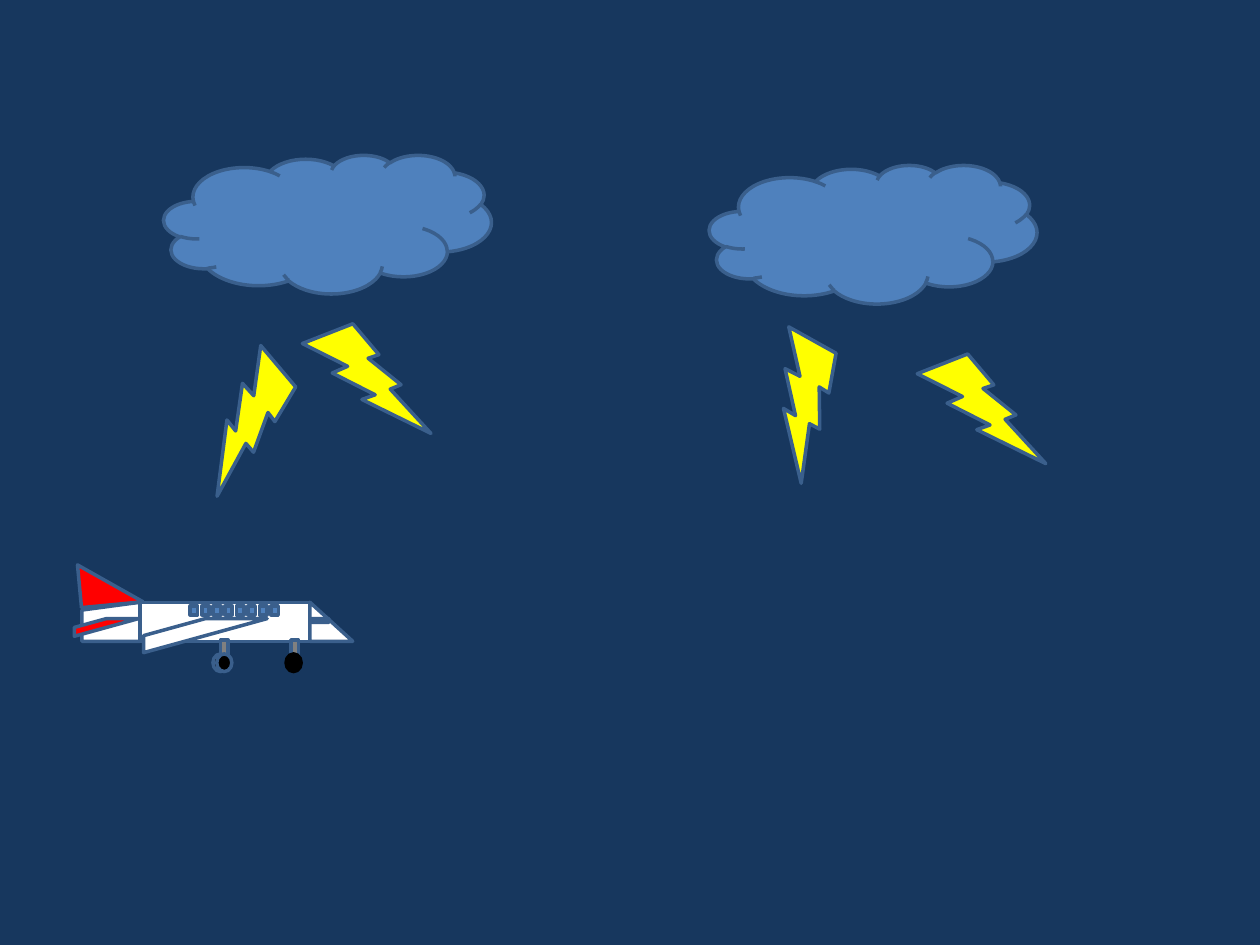
"""Build a slide with a jet plane flying below two storm clouds."""
from pptx import Presentation
from pptx.dml.color import RGBColor
from pptx.enum.shapes import MSO_SHAPE as S
from pptx.util import Inches, Pt

NIGHT = RGBColor(0x17, 0x37, 0x5E)
BLUE = RGBColor(0x4F, 0x81, 0xBD)
OUTLINE = RGBColor(0x3A, 0x5F, 0x8C)
WHITE = RGBColor(0xFF, 0xFF, 0xFF)
GRAY = RGBColor(0x80, 0x80, 0x80)
BLACK = RGBColor(0x00, 0x00, 0x00)
RED = RGBColor(0xFF, 0x00, 0x00)
YELLOW = RGBColor(0xFF, 0xFF, 0x00)

STRUT, WHEEL, WINDOW = (0.06, 0.14), (0.12, 0.14), (0.06, 0.07)
CLOUD, BOLT = (2.6, 1.1), (1.02, 0.87)
WINDOW_COUNT, WINDOW_LEFT, WINDOW_TOP, WINDOW_PITCH = 8, 1.51, 4.81, 0.0914

FUSELAGE = [
    (S.RECTANGLE, (1.11, 4.78), (1.35, 0.31), WHITE),
    (S.RIGHT_TRIANGLE, (2.46, 4.78), (0.34, 0.31), WHITE),
    (S.DIAGONAL_STRIPE, (1.14, 4.91), (0.98, 0.27), WHITE),
]
LANDING_GEAR = [
    (S.RECTANGLE, (2.31, 5.08), STRUT, GRAY),
    (S.OVAL, (2.27, 5.19), WHEEL, BLACK, 0, BLACK),
    (S.RECTANGLE, (1.75, 5.08), STRUT, GRAY),
    (S.OVAL, (1.69, 5.19), WHEEL, BLACK),
    (S.OVAL, (1.72, 5.19), WHEEL, BLACK),
]
TAIL = [
    (S.FLOWCHART_MANUAL_INPUT, (0.65, 4.78), (0.46, 0.31), WHITE),
    (S.RIGHT_TRIANGLE, (0.63, 4.46), (0.49, 0.34), RED, 354.6),
]
WINDOWS = [
    (S.RECTANGLE, (WINDOW_LEFT + i * WINDOW_PITCH, WINDOW_TOP), WINDOW, BLUE)
    for i in range(WINDOW_COUNT)
]
COCKPIT_AND_TAILPLANE = [
    (S.ROUNDED_RECTANGLE, (2.46, 4.91), (0.15, 0.03), BLUE),
    (S.DIAGONAL_STRIPE, (0.59, 4.91), (0.51, 0.14), RED),
]
PLANE = FUSELAGE + LANDING_GEAR + TAIL + WINDOWS + COCKPIT_AND_TAILPLANE
STORM = [
    (S.CLOUD, (1.3, 1.23), CLOUD, BLUE),
    (S.CLOUD, (5.63, 1.31), CLOUD, BLUE),
    (S.LIGHTNING_BOLT, (2.4, 2.57), BOLT, YELLOW),
    (S.LIGHTNING_BOLT, (5.86, 2.73), BOLT, YELLOW, 50.5),
    (S.LIGHTNING_BOLT, (1.46, 2.88), BOLT, YELLOW, 71.2),
    (S.LIGHTNING_BOLT, (7.28, 2.81), BOLT, YELLOW),
]


def draw(shapes, preset, position, size, fill, rotation=0, outline=OUTLINE):
    part = shapes.add_shape(preset, *map(Inches, position + size))
    part.shadow.inherit = False
    part.rotation = rotation
    part.fill.solid()
    part.fill.fore_color.rgb = fill
    part.line.color.rgb = outline
    part.line.width = Pt(2)


def main():
    deck = Presentation()
    deck.slide_width, deck.slide_height = Inches(10), Inches(7.5)
    slide = deck.slides.add_slide(deck.slide_layouts[6])
    slide.background.fill.solid()
    slide.background.fill.fore_color.rgb = NIGHT

    plane = slide.shapes.add_group_shape()
    for part in PLANE:
        draw(plane.shapes, *part)
    for part in STORM:
        draw(slide.shapes, *part)
    deck.save("out.pptx")


if __name__ == "__main__":
    main()
